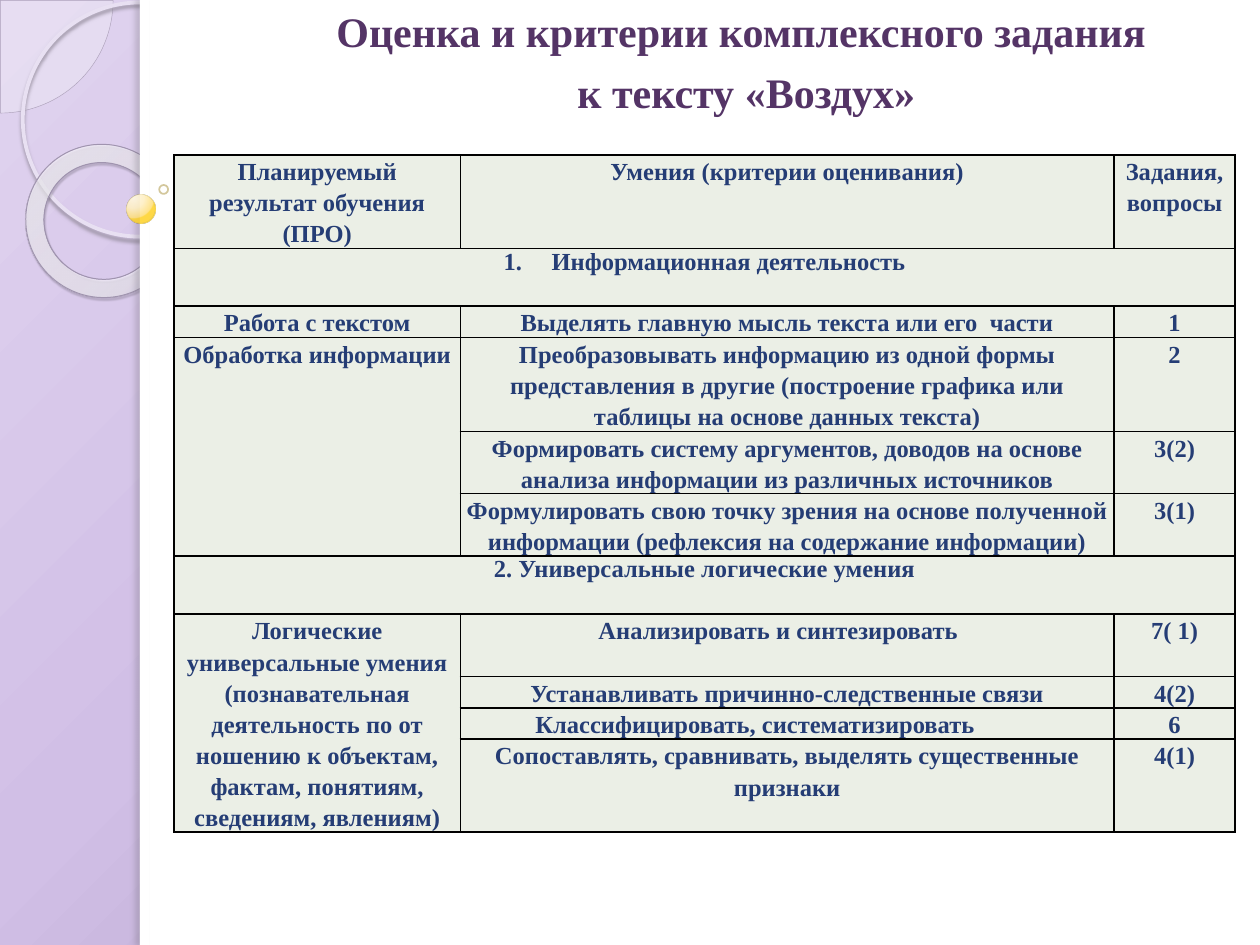
"""Build the slide with the assessment criteria for the text «Воздух»."""
from lxml.etree import SubElement
from pptx import Presentation
from pptx.dml.color import RGBColor
from pptx.enum.shapes import MSO_SHAPE as Preset
from pptx.enum.text import PP_ALIGN as Align
from pptx.oxml import parse_xml
from pptx.oxml.ns import nsdecls, qn
from pptx.util import Cm, Pt


def add_colour(parent, colour, alpha=100):
    tint = SubElement(parent, qn("a:srgbClr"), val=str(RGBColor.from_string(colour)))
    if alpha < 100:
        SubElement(tint, qn("a:alpha"), val=str(alpha * 1000))


def paint(parent, stops, focus=None):
    plain = parent.find(qn("a:solidFill"))
    if focus is None:
        plain.clear()
        add_colour(plain, *stops[0][1:])
        return
    gradient = parse_xml(f'<a:gradFill {nsdecls("a")} rotWithShape="1"/>')
    stop_list = SubElement(gradient, qn("a:gsLst"))
    for position, *tint in stops:
        add_colour(SubElement(stop_list, qn("a:gs"), pos=str(position * 1000)), *tint)
    circle = SubElement(gradient, qn("a:path"), path="circle")
    sides = {side: str(value * 1000) for side, value in zip("ltrb", focus)}
    SubElement(circle, qn("a:fillToRect"), **sides)
    parent.replace(plain, gradient)


deck = Presentation()
deck.slide_width, deck.slide_height = Cm(25.4), Cm(19.05)
slide = deck.slides.add_slide(deck.slide_layouts[6])
slide.background.fill.solid()
paint(next(slide.element.iter(qn("p:bgPr"))),
      [(0, "E0D3EF"), (40, "D1BFE6"), (100, "9A8AAD")], (-24, -20, 124, 120))

white = ([(0, "FFFFFF")], None)
donut_fill = ([(0, "F9F7FB", 70), (70, "FCFBFE", 55), (100, "B099CA", 60)],
              (-408, -50, 508, 150))
bead_fill = ([(0, "FFF7E2", 95), (50, "FFF0C5", 90), (95, "FFE07C", 88),
              (100, "FFD327", 85)], (25, 12, 75, 88))
decorations = [
    (Preset.PIE, (-2.26, -2.26, 4.54, 4.54), [0, 54.02], 0,
     ([(0, "F6F4F9", 33)], None), ("ACA0B9", 0.25, 100), None),
    (Preset.OVAL, (0.46, 0.05, 4.72, 4.72), [], 0,
     None, ("E8E0F2", 2.15, 100), ("958D9D", 85, 2, 2, 90)),
    (Preset.DONUT, (0.51, 2.92, 3.12, 3.07), [0.12], 38.6,
     donut_fill, ("A094AF", 0.58, 100), ("4A4550", 35, 1, 1.2, 75)),
    (Preset.RECTANGLE, (2.82, 0, 22.58, 19.05), [], 0, white, None, None),
    (Preset.RECTANGLE, (2.82, 0, 0.2, 19.05), [], 0,
     white, None, ("646068", 25, 3, 3, 180)),
    (Preset.OVAL, (2.55, 3.92, 0.58, 0.58), [], 0,
     bead_fill, ("CAB45C", 0.16, 60), None),
    (Preset.OVAL, (3.21, 3.73, 0.18, 0.18), [], 0, None, ("B6A35A", 1, 60), None),
]
for preset, box, adjustments, rotation, fill, outline, shadow in decorations:
    decoration = slide.shapes.add_shape(preset, *map(Cm, box))
    decoration.rotation = rotation
    decoration.shadow.inherit = False
    for index, value in enumerate(adjustments):
        decoration.adjustments[index] = value
    properties = decoration.element.spPr
    if fill:
        decoration.fill.solid()
        paint(properties, *fill)
    else:
        decoration.fill.background()
    if outline:
        colour, width, alpha = outline
        decoration.line.width = Pt(width)
        decoration.line.fill.solid()
        paint(properties.find(qn("a:ln")), [(0, colour, alpha)])
    else:
        decoration.line.fill.background()
    if shadow:
        colour, alpha, blur, distance, angle = shadow
        cast = SubElement(properties.find(qn("a:effectLst")), qn("a:outerShdw"),
                          blurRad=str(Pt(blur)), dist=str(Pt(distance)),
                          dir=str(angle * 60000), algn="ctr", rotWithShape="0")
        add_colour(cast, colour, alpha)

title = slide.shapes.add_textbox(Cm(4.54), Cm(0.11), Cm(20.8), Cm(2.41)).text_frame
title.word_wrap = True
title.margin_top = 0
title.text = "Оценка и критерии комплексного задания\n к тексту «Воздух»"
for paragraph in title.paragraphs:
    paragraph.alignment = Align.CENTER
    paragraph.space_before = Pt(6)
    font = paragraph.runs[0].font
    font.name, font.size, font.bold = "Times New Roman", Pt(24), True
    font.color.rgb = RGBColor.from_string("543466")

criteria = [
    ("Планируемый\nрезультат обучения (ПРО)", "Умения (критерии оценивания)",
     "Задания, вопросы"),
    ("Информационная деятельность", "", ""),
    ("Работа с текстом", "Выделять главную мысль текста или его  части", "1"),
    ("Обработка информации",
     "Преобразовывать информацию из одной формы представления в другие "
     "(построение графика или таблицы на основе данных текста)", "2"),
    ("", "Формировать систему аргументов, доводов на основе анализа информации "
     "из различных источников", "3(2)"),
    ("", "Формулировать свою точку зрения на основе полученной информации "
     "(рефлексия на содержание информации)", "3(1)"),
    ("2. Универсальные логические умения", "", ""),
    ("Логические универсальные умения (познавательная деятельность по от ношению "
     "к объектам, фактам, понятиям, сведениям, явлениям)",
     "Анализировать и синтезировать", "7( 1)"),
    ("", "Устанавливать причинно-следственные связи", "4(2)"),
    ("", "Классифицировать, систематизировать", "6"),
    ("", "Сопоставлять, сравнивать, выделять существенные признаки", "4(1)"),
]
column_widths = [5.77, 13.18, 2.44]
row_heights = [1.88, 1.16, 0.64, 1.89, 1.25, 1.25, 1.17, 1.26, 0.63, 0.63, 1.86]
section_rows = (1, 6)
right_margins = {(7, 1): 0.44, (9, 1): 1.37}
grid = slide.shapes.add_table(len(criteria), 3, Cm(3.51), Cm(3.12),
                              Cm(sum(column_widths)), Cm(sum(row_heights))).table
grid.first_row = grid.horz_banding = False
for column, width in zip(grid.columns, column_widths):
    column.width = Cm(width)
for row, height in zip(grid.rows, row_heights):
    row.height = Cm(height)

for row_index, texts in enumerate(criteria):
    for column_index, text in enumerate(texts):
        cell = grid.cell(row_index, column_index)
        cell.margin_left = Cm(0.08)
        cell.margin_right = Cm(right_margins.get((row_index, column_index), 0.08))
        cell.margin_top = cell.margin_bottom = 0
        cell.text = text
        for paragraph in cell.text_frame.paragraphs:
            paragraph.alignment = Align.CENTER
            paragraph.line_spacing = 1 if row_index in section_rows else Pt(17.8)
            for run in paragraph.runs:
                font = run.font
                font.name, font.size, font.bold = "Times New Roman", Pt(14), True
                font.color.rgb = RGBColor.from_string("253D75")
        cell_properties = cell._tc.get_or_add_tcPr()
        for side in ("a:lnL", "a:lnR", "a:lnT", "a:lnB"):
            border = SubElement(cell_properties, qn(side), w=str(Pt(1)))
            add_colour(SubElement(border, qn("a:solidFill")), "000000")
        cell.fill.solid()
        cell.fill.fore_color.rgb = RGBColor.from_string("EBEFE6")

numbering = grid.cell(1, 0).text_frame.paragraphs[0]._p.get_or_add_pPr()
numbering.set("marL", str(Cm(0.97)))
numbering.set("indent", str(-Cm(0.97)))
SubElement(numbering, qn("a:buFont"), typeface="+mj-lt")
SubElement(numbering, qn("a:buAutoNum"), type="arabicPeriod")

for first, last in [((1, 0), (1, 2)), ((3, 0), (5, 0)),
                    ((6, 0), (6, 2)), ((7, 0), (10, 0))]:
    grid.cell(*first).merge(grid.cell(*last))

deck.save("out.pptx")
